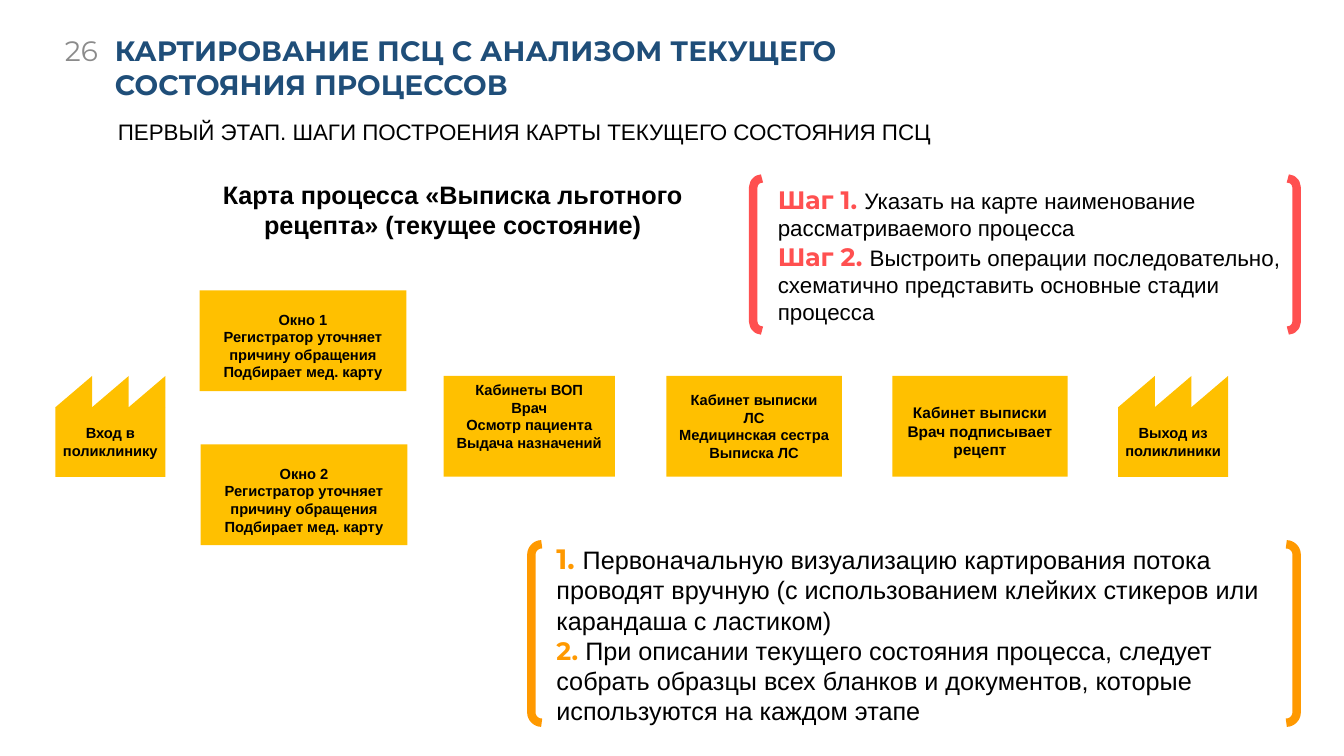
from lxml import etree
from pptx import Presentation
from pptx.dml.color import RGBColor
from pptx.enum.shapes import MSO_SHAPE as Shape
from pptx.enum.text import MSO_ANCHOR as Anchor, PP_ALIGN as Align
from pptx.util import Inches, Pt

# Content
TITLE = "КАРТИРОВАНИЕ ПСЦ С АНАЛИЗОМ ТЕКУЩЕГО СОСТОЯНИЯ ПРОЦЕССОВ"
NUMBER = "26"
SUBTITLE = "ПЕРВЫЙ ЭТАП. ШАГИ ПОСТРОЕНИЯ КАРТЫ ТЕКУЩЕГО СОСТОЯНИЯ ПСЦ"
MAP_TITLE = "Карта процесса «Выписка льготного рецепта» (текущее состояние)"
STEPS = [
    ("Шаг 1. ", "Указать на карте наименование рассматриваемого процесса"),
    ("Шаг 2. ", "Выстроить операции последовательно, схематично представить "
                "основные стадии процесса"),
]
ADVICE = [
    ("1. ", "Первоначальную визуализацию картирования потока проводят вручную "
            "(с использованием клейких стикеров или карандаша с ластиком)"),
    ("2. ", "При описании текущего состояния процесса, следует собрать образцы "
            "всех бланков и документов, которые используются на каждом этапе"),
]
WINDOW = ["Регистратор уточняет причину обращения", "Подбирает мед. карту"]

# Process map: left and top of each part, in inches
ROW, UPPER, LOWER = 3.73, 2.88, 4.41
GATES = [(0.55, "Вход в поликлинику"), (11.09, "Выход из поликлиники")]
# left, top, width, text offset from the top, text size, lines
STAGES = [
    (4.40, ROW, 1.70, 0, 10.5,
     ["Кабинеты ВОП", "Врач", "Осмотр пациента", "Выдача назначений"]),
    (6.61, ROW, 1.74, 0.1, 10.5,
     ["Кабинет выписки", "ЛС", "Медицинская сестра", "Выписка ЛС"]),
    (8.85, ROW, 1.74, 0.22, 11, ["Кабинет выписки", "Врач подписывает рецепт"]),
    (1.98, UPPER, 2.05, 0.15, 10.5, ["Окно 1"] + WINDOW),
    (1.99, LOWER, 2.05, 0.15, 10.5, ["Окно 2"] + WINDOW),
]
STAGE_HEIGHT = 1.0
GATE_WIDTH, ROOF_HEIGHT, ROOF_TEETH = 1.09, 0.31, 3

BODY, HEAD = "Arial", "Montserrat"
BLACK, WHITE, NAVY, GREY = "000000", "FFFFFF", "1F4E79", "8B8B8B"
YELLOW, RED, ORANGE = "FFC000", "FF5050", "FF9900"


def color(value):
    return RGBColor.from_string(value)


def add_span(para, text, size, font=BODY, ink=BLACK, bold=False):
    span = para.add_run()
    span.text = text
    span.font.size, span.font.name, span.font.bold = Pt(size), font, bold
    span.font.color.rgb = color(ink)


def add_text(shapes, text, left, top, width, height, align=Align.LEFT,
             anchor=Anchor.TOP, **style):
    """Text box with one paragraph for each line of text."""
    box = shapes.add_textbox(*map(Inches, (left, top, width, height)))
    frame = box.text_frame
    frame.word_wrap, frame.vertical_anchor = True, anchor
    for index, line in enumerate([text] if isinstance(text, str) else text):
        para = frame.add_paragraph() if index else frame.paragraphs[0]
        para.alignment = align
        add_span(para, line, **style)


def add_block(shapes, kind, left, top, width, height, fill=YELLOW):
    block = shapes.add_shape(kind, *map(Inches, (left, top, width, height)))
    block.shadow.inherit = False
    block.fill.solid()
    block.fill.fore_color.rgb = color(fill)
    block.line.fill.background()
    return block


def add_brackets(page, items, left, top, width, height, ink, size):
    """Bracketed note: coloured label, then plain text two points smaller."""
    note = add_block(page.shapes, Shape.DOUBLE_BRACKET,
                     left, top, width, height, fill=WHITE)
    note.adjustments[0] = 0.058
    note.line.color.rgb = color(ink)
    note.line.width = Pt(6)
    frame = note.text_frame
    frame.word_wrap, frame.vertical_anchor = True, Anchor.MIDDLE
    for index, (label, text) in enumerate(items):
        para = frame.add_paragraph() if index else frame.paragraphs[0]
        para.alignment = Align.LEFT
        props = para._p.get_or_add_pPr()
        props.set("marL", str(Inches(0.12)))
        props.set("indent", "0")
        label_size = size if index == 0 or size == 18 else size - 2
        add_span(para, label, label_size, font=HEAD, ink=ink, bold=True)
        add_span(para, text, size - 2)


def add_gate(page, left, text):
    """Factory sign: a saw-tooth roof over a wall."""
    shapes = page.shapes.add_group_shape().shapes
    tooth = GATE_WIDTH / ROOF_TEETH
    for index in range(ROOF_TEETH):
        roof = add_block(shapes, Shape.ISOSCELES_TRIANGLE,
                         left + index * tooth, ROW, tooth, ROOF_HEIGHT)
        roof.adjustments[0] = 1
    wall = ROW + ROOF_HEIGHT
    add_block(shapes, Shape.RECTANGLE, left, wall, GATE_WIDTH,
              STAGE_HEIGHT - ROOF_HEIGHT)
    add_text(shapes, text, left - 0.07, wall + 0.12, GATE_WIDTH + 0.14, 0.45,
             align=Align.CENTER, size=10.5, bold=True)


def add_stage(page, left, top, width, offset, size, lines):
    shapes = page.shapes.add_group_shape().shapes
    add_block(shapes, Shape.RECTANGLE, left, top, width, STAGE_HEIGHT)
    add_text(shapes, lines, left, top + offset, width, STAGE_HEIGHT - offset,
             align=Align.CENTER, size=size, bold=True)


def main():
    deck = Presentation()
    deck.slide_width, deck.slide_height = Inches(13.33), Inches(7.5)
    page = deck.slides.add_slide(deck.slide_layouts[6])
    shapes = page.shapes

    # Heading
    add_text(shapes, TITLE, 1.04, 0.4, 8.22, 0.54, anchor=Anchor.MIDDLE,
             size=20, font=HEAD, ink=NAVY, bold=True)
    add_text(shapes, NUMBER, 0, 0.23, 1.07, 0.54, align=Align.RIGHT,
             anchor=Anchor.MIDDLE, size=20, font=HEAD, ink=GREY)
    add_text(shapes, SUBTITLE, 1.07, 1.12, 8.51, 0.37, size=16)

    # Bracketed notes
    add_brackets(page, STEPS, 7.47, 1.77, 5.39, 1.51, RED, 18)
    add_brackets(page, ADVICE, 5.27, 5.4, 7.59, 1.77, ORANGE, 20)

    # Process map
    for gate in GATES:
        add_gate(page, *gate)
    for stage in STAGES:
        add_stage(page, *stage)
    add_text(shapes, MAP_TITLE, 1.99, 1.73, 5, 0.71, align=Align.CENTER,
             size=18, bold=True)

    deck.save("out.pptx")


if __name__ == "__main__":
    main()
